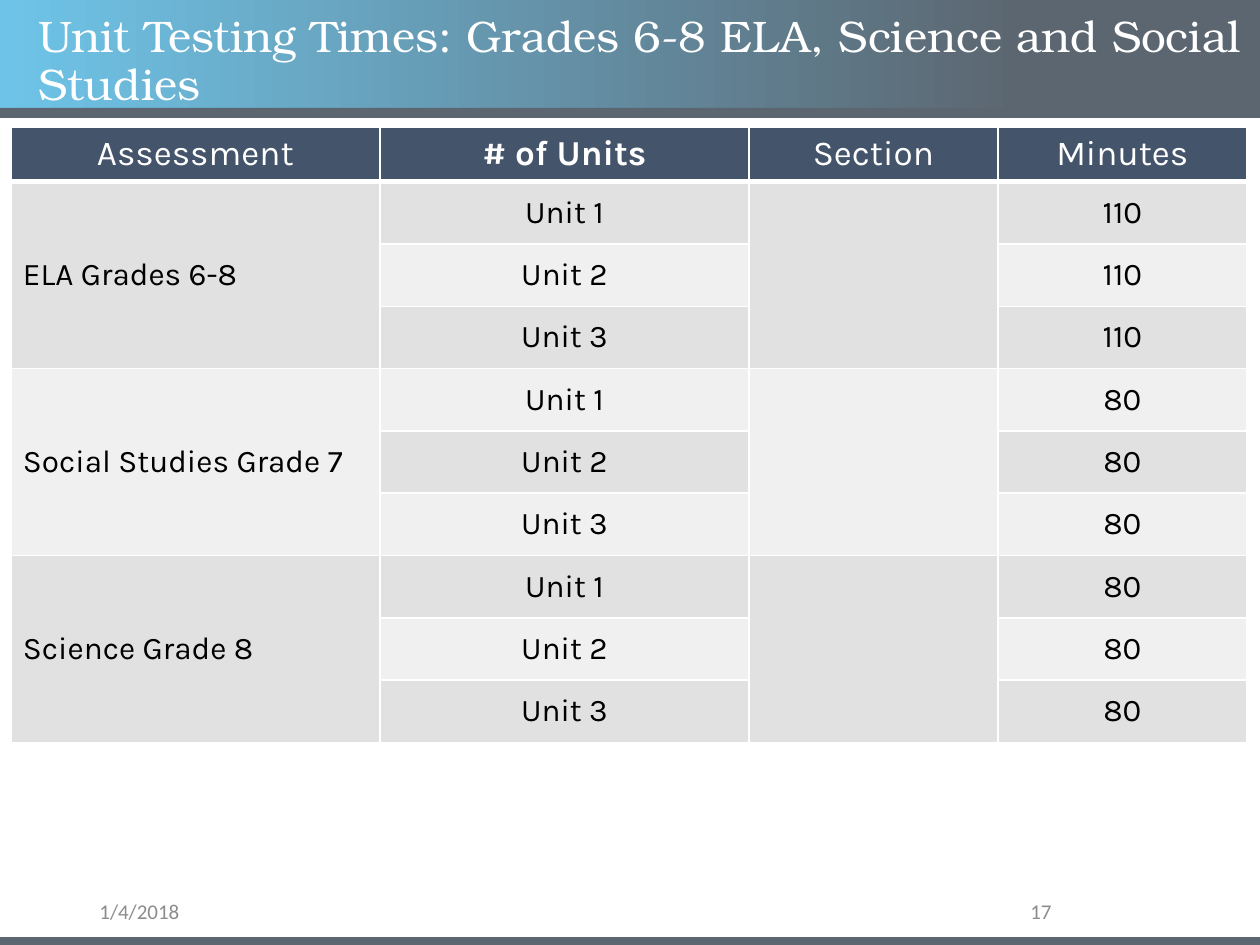
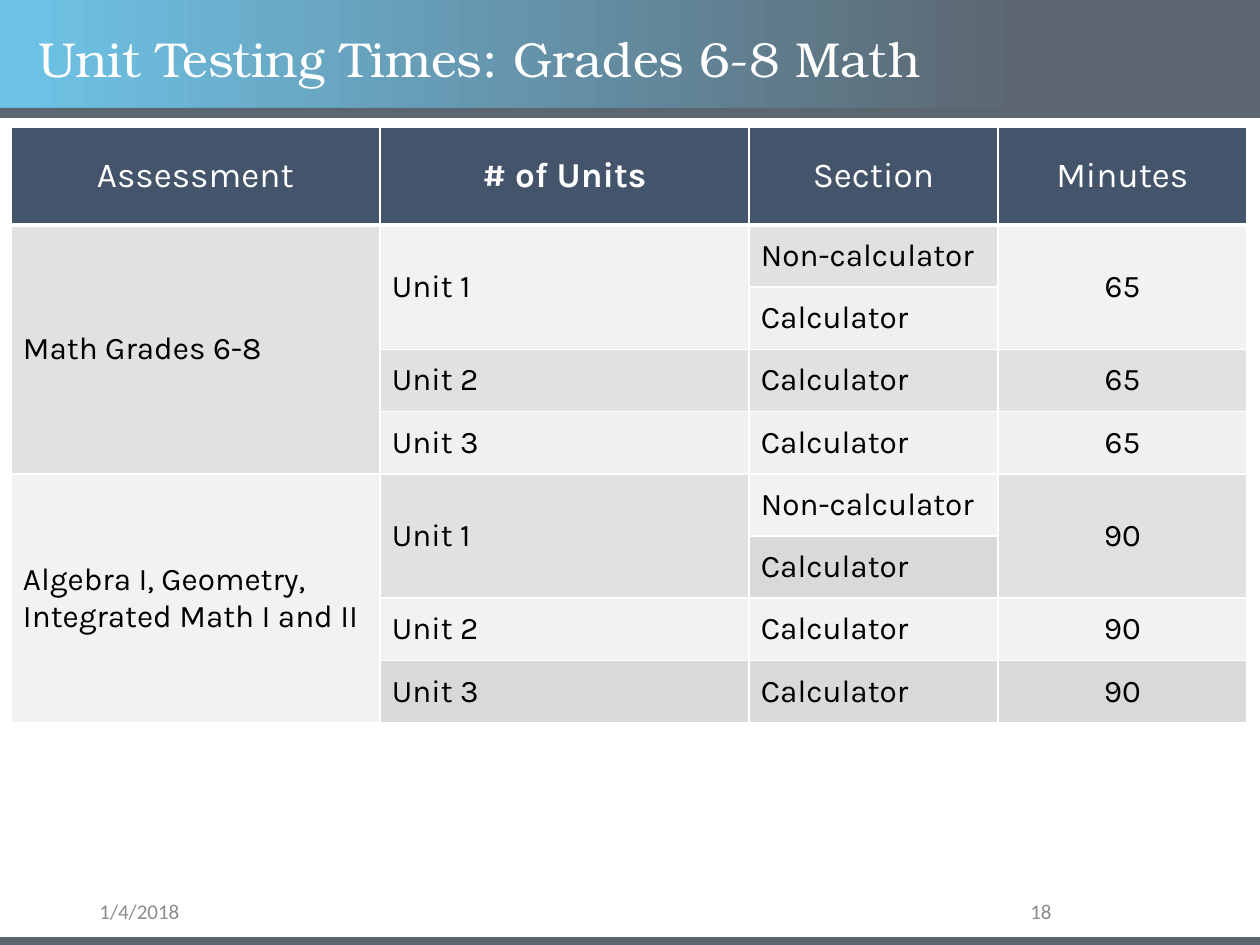
from lxml import etree
from pptx import Presentation
from pptx.dml.color import RGBColor
from pptx.enum import shapes, text
from pptx.oxml.ns import qn
from pptx.util import Pt

EMU_PER_PX = 914400 / 126
WIDTH, HEIGHT = 1260, 945

COLORS = {
    "sky": "6EC4E8", "slate": "5C6670", "navy": "44546A", "white": "FFFFFF",
    "black": "000000", "footer": "8C8C8C",
    "mid": "E1E1E1", "light": "F0F0F0", "pale": "F2F2F2", "dark": "D9D9D9",
}
LEFT, CENTER, RIGHT = text.PP_ALIGN.LEFT, text.PP_ALIGN.CENTER, text.PP_ALIGN.RIGHT
MIDDLE = text.MSO_ANCHOR.MIDDLE

HEADINGS = ["Assessment", "# of Units", "Section", "Minutes"]
COLUMN_WIDTHS = [369, 369, 249, 249]


def px(*lengths):
    return [round(length * EMU_PER_PX) for length in lengths]


def rgb(name):
    return RGBColor.from_string(COLORS[name])


def write(tf, words, font="Karla", size=18, color="black", bold=False,
          align=LEFT, spacing=None):
    p = tf.paragraphs[0]
    p.alignment = align
    if spacing:
        p.line_spacing = spacing
    r = p.add_run()
    r.text = words
    r.font.name, r.font.size, r.font.bold = font, Pt(size), bold
    r.font.color.rgb = rgb(color)


def set_borders(cell, bottom=1):
    tc_pr = cell._tc.get_or_add_tcPr()
    for side, points in (("L", 1), ("R", 1), ("T", 1), ("B", bottom)):
        ln = etree.SubElement(tc_pr, qn(f"a:ln{side}"), w=str(Pt(points)))
        fill = etree.SubElement(ln, qn("a:solidFill"))
        etree.SubElement(fill, qn("a:srgbClr"), val=COLORS["white"])


class Deck:
    def __init__(self):
        self.prs = Presentation()
        self.prs.slide_width, self.prs.slide_height = px(WIDTH, HEIGHT)
        self.s = None

    def new_slide(self, number):
        self.s = self.prs.slides.add_slide(self.prs.slide_layouts[5])
        self.footer("1/4/2018", 87, 284, LEFT)
        self.band(0, 110, "sky", "slate")
        self.band(108, 10, "slate")
        self.band(937, 8, "slate")
        self.footer(str(number), 890, 174, RIGHT)

    def band(self, top, height, color, end_color=None):
        sp = self.s.shapes.add_shape(shapes.MSO_SHAPE.RECTANGLE,
                                     *px(0, top, WIDTH, height))
        sp.shadow.inherit = False
        sp.line.fill.background()
        if not end_color:
            sp.fill.solid()
            sp.fill.fore_color.rgb = rgb(color)
            return
        sp.fill.gradient()
        sp.fill.gradient_angle = 0
        stops = zip(sp.fill.gradient_stops, (0, 0.81), (color, end_color))
        for stop, position, name in stops:
            stop.position = position
            stop.color.rgb = rgb(name)

    def footer(self, words, left, width, align):
        tf = self.s.shapes.add_textbox(*px(left, 897, width, 29)).text_frame
        tf.word_wrap, tf.vertical_anchor = True, MIDDLE
        write(tf, words, font="Calibri", size=12, color="footer", align=align)

    def title(self, words, width, size):
        sp = self.s.shapes.title
        sp.left, sp.top, sp.width, sp.height = px(26, 26, width, 72)
        tf = sp.text_frame
        tf.word_wrap, tf.vertical_anchor = True, MIDDLE
        tf.auto_size = text.MSO_AUTO_SIZE.NONE
        write(tf, words, font="TeX Gyre Bonum", size=size, color="white",
              spacing=0.9)
        # Bring the title in front of the bands
        self.s.shapes._spTree.append(sp._element)

    def cell(self, cell, words, fill, bottom=1, **style):
        set_borders(cell, bottom)
        cell.fill.solid()
        cell.fill.fore_color.rgb = rgb(fill)
        cell.vertical_anchor = MIDDLE
        if words:
            write(cell.text_frame, words, **style)

    def table(self, rows, tones, header_height, body_height, centered,
              tone_overrides=None):
        """Rows hold None where the cell above extends downwards."""
        tone_overrides = tone_overrides or {}
        frame = self.s.shapes.add_table(
            len(rows) + 1, len(HEADINGS),
            *px(11, 127, sum(COLUMN_WIDTHS), header_height + body_height))
        table = frame.table
        table.horz_banding = False
        for column, width in zip(table.columns, px(*COLUMN_WIDTHS)):
            column.width = width
        heights = [header_height] + [body_height / len(rows)] * len(rows)
        for row, height in zip(table.rows, px(*heights)):
            row.height = height

        # Header row
        for c, heading in enumerate(HEADINGS):
            self.cell(table.cell(0, c), heading, "navy", bottom=3, size=20,
                      color="white", bold=c == 1, align=CENTER)

        # Body, with merged cells
        for r, (row, tone) in enumerate(zip(rows, tones), 1):
            for c, words in enumerate(row):
                cell = table.cell(r, c)
                cell.margin_left, cell.margin_right = px(12, 12)
                cell.margin_top, cell.margin_bottom = px(12, 12)
                self.cell(cell, words, tone_overrides.get((r, c), tone),
                          align=CENTER if c in centered else LEFT)
                last = r
                while last < len(rows) and rows[last][c] is None:
                    last += 1
                if words is not None and last > r:
                    cell.merge(table.cell(last, c))


def language_and_science(deck):
    deck.new_slide(17)
    subjects = [("ELA Grades 6-8", "110"), ("Social Studies Grade 7", "80"),
                ("Science Grade 8", "80")]
    rows = []
    for subject, minutes in subjects:
        rows += [[subject, "Unit 1", "", minutes],
                 [None, "Unit 2", None, minutes],
                 [None, "Unit 3", None, minutes]]
    tones = [("mid", "light")[i % 2] for i in range(len(rows))]
    deck.table(rows, tones, 53, 561, centered=(1, 3))
    deck.title("Unit Testing Times: Grades 6-8 ELA, Science and Social Studies",
               1234, 25.2)


def math_units(deck):
    deck.new_slide(18)
    courses = [("Math Grades 6-8", "65"),
               ("Algebra I, Geometry, Integrated Math I and II", "90")]
    rows = []
    for course, minutes in courses:
        rows += [[course, "Unit 1", "Non-calculator", minutes],
                 [None, None, "Calculator", None],
                 [None, "Unit 2", "Calculator", minutes],
                 [None, "Unit 3", "Calculator", minutes]]
    tones = ["mid", "light"] * 2 + ["pale", "dark"] * 2
    # The two-row cells stand out from their neighbours
    overrides = {(1, 1): "pale", (1, 3): "pale", (5, 1): "mid", (5, 3): "mid"}
    deck.table(rows, tones, 98, 498, centered=(3,), tone_overrides=overrides)
    deck.title("Unit Testing Times: Grades 6-8 Math", 1149, 28)


def main():
    deck = Deck()
    language_and_science(deck)
    math_units(deck)
    deck.prs.save("out.pptx")


if __name__ == "__main__":
    main()
